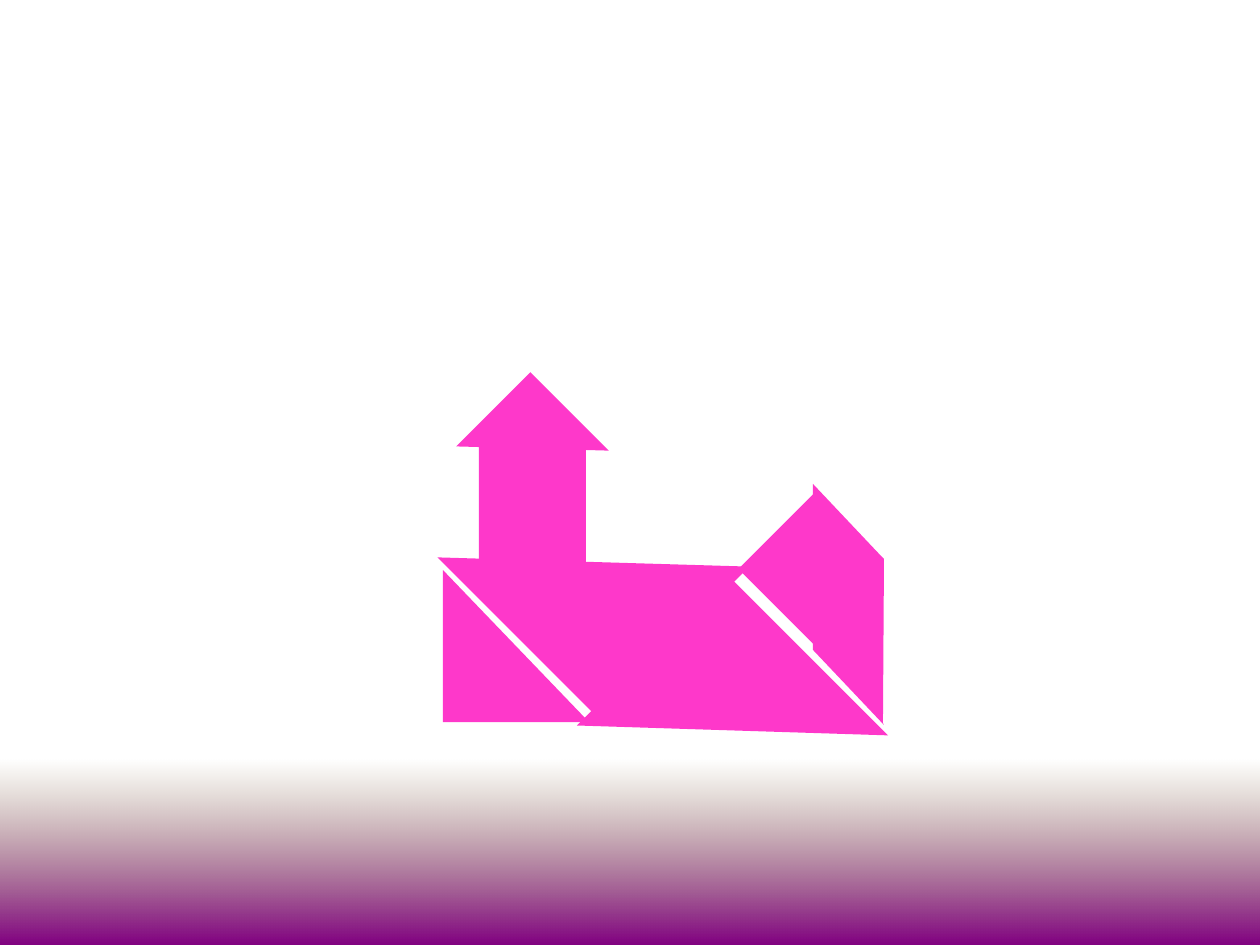
from pptx import Presentation
from pptx.dml.color import RGBColor as Rgb
from pptx.enum.shapes import MSO_SHAPE as Kind
from pptx.oxml.ns import qn
from lxml.etree import SubElement as Sub

PX = 914400 / 126
WIDE, HIGH = 1260, 945
COLORS = {"pink": "FE38CA", "earth": "765E2F", "plum": "800080"}

# Tangram pieces: kind, left, top, width, height, turn, flip
PIECES = [
    (Kind.RIGHT_TRIANGLE, 181, 251, 227, 213, 225, True),
    (Kind.RIGHT_TRIANGLE, 2, 200, 152, 146, 90, True),
    (Kind.RECTANGLE, 41, 74, 107, 115, 0, False),
    (Kind.RIGHT_TRIANGLE, 42, 82, 227, 214, 45, True),
    (Kind.RIGHT_TRIANGLE, 42, 20, 105, 111, 135, False),
    (Kind.RIGHT_TRIANGLE, 324, 142, 107, 111, 135, True),
]
# Outline of the slanted piece on the right
SLANT = [(375, 111), (375, 277), (446, 352), (445, 350), (446, 186), (444, 184)]


def emu(*sizes):
    return [round(size * PX) for size in sizes]


def paint(shape):
    shape.shadow.inherit = False
    shape.fill.solid()
    shape.fill.fore_color.rgb = Rgb.from_string(COLORS["pink"])
    shape.line.fill.background()


def ground(slide, left, top, width, height):
    band = slide.shapes.add_shape(Kind.RECTANGLE, *emu(left, top, width, height))
    band.shadow.inherit = False
    band.line.fill.background()
    band.fill.gradient()
    band.fill.gradient_angle = 270
    for stop, name, place in zip(band.fill.gradient_stops, ("earth", "plum"), (0, 1)):
        stop.color.rgb = Rgb.from_string(COLORS[name])
        stop.position = place
    # The upper stop is fully transparent
    tint = next(band._element.spPr.iter(qn("a:srgbClr")))
    Sub(tint, qn("a:alpha")).set("val", "0")


def castle(slide, left, top):
    parts = slide.shapes.add_group_shape().shapes
    for kind, x, y, width, height, turn, flip in PIECES:
        piece = parts.add_shape(kind, *emu(left + x, top + y, width, height))
        piece.rotation = turn
        if flip:
            piece._element.spPr.xfrm.set("flipH", "1")
        paint(piece)
    pen = parts.build_freeform(*SLANT[0], scale=PX)
    pen.add_line_segments(SLANT[1:], close=True)
    paint(pen.convert_to_shape(*emu(left, top)))


def main():
    deck = Presentation()
    deck.slide_width, deck.slide_height = emu(WIDE, HIGH)
    slide = deck.slides.add_slide(deck.slide_layouts[6])
    ground(slide, 0, 760, WIDE, 185)
    castle(slide, 438, 373)
    deck.save("out.pptx")


if __name__ == "__main__":
    main()
